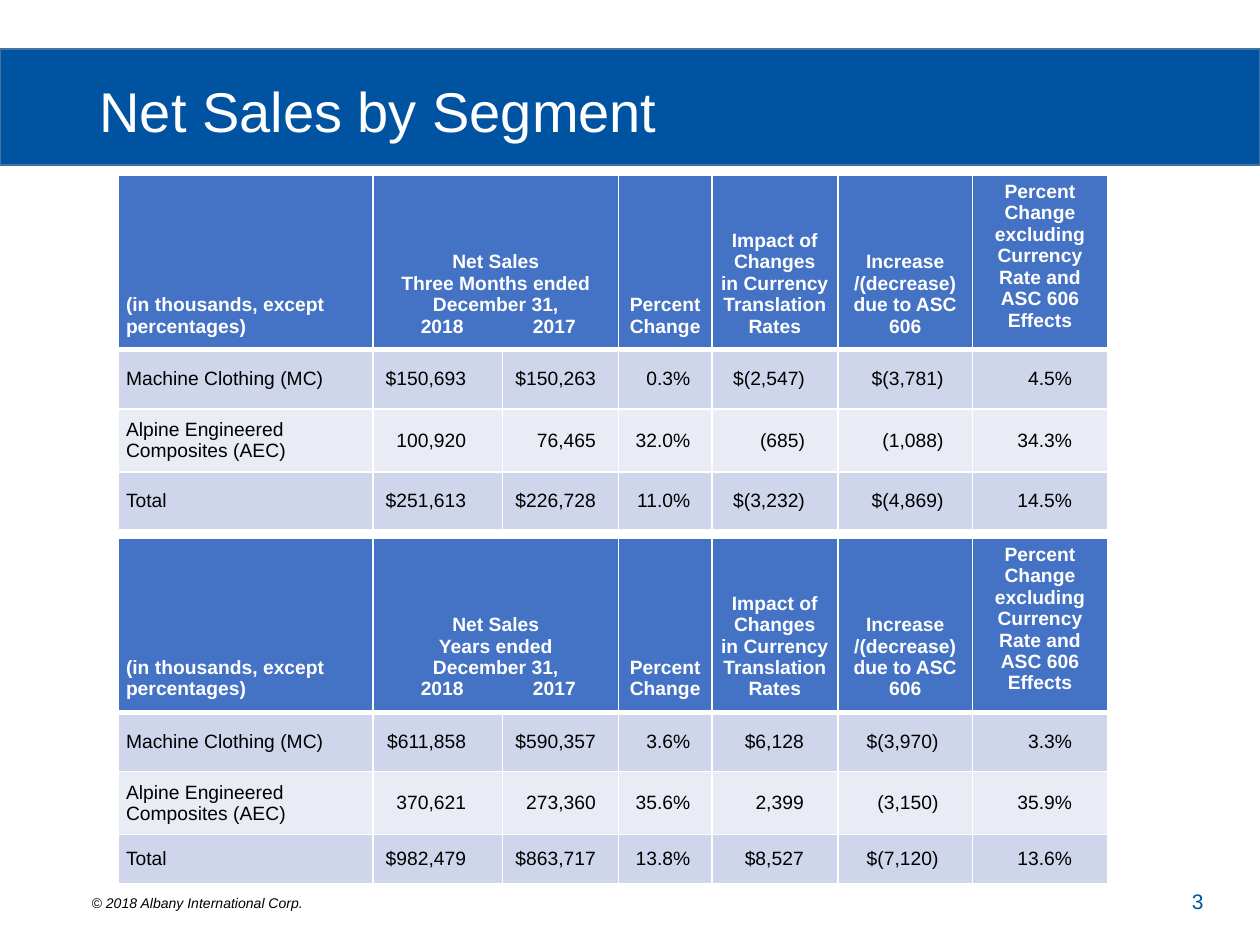
from dataclasses import dataclass

from lxml import etree
from pptx import Presentation
from pptx.dml.color import RGBColor
from pptx.enum.shapes import MSO_SHAPE
from pptx.enum.text import MSO_ANCHOR, MSO_AUTO_SIZE, PP_ALIGN
from pptx.oxml.ns import qn
from pptx.util import Inches, Pt

LEFT, CENTER, RIGHT = PP_ALIGN.LEFT, PP_ALIGN.CENTER, PP_ALIGN.RIGHT
MIDDLE, BOTTOM = MSO_ANCHOR.MIDDLE, MSO_ANCHOR.BOTTOM


@dataclass(frozen=True)
class Theme:
    font: str = "Arial"
    blue: str = "0053A1"
    band_line: str = "43739E"
    header: str = "4472C4"
    odd_row: str = "CFD5EA"
    even_row: str = "E9EBF5"
    white: str = "FFFFFF"
    black: str = "000000"
    title_size: int = 32
    table_size: int = 11
    number_size: int = 12
    footer_size: int = 8


THEME = Theme()


def write_lines(frame, lines, size, color, align=LEFT, **font_values):
    """Write one paragraph per line; a line with tabs gets the year tab stops."""
    frame.word_wrap = True
    values = {"name": THEME.font, "size": Pt(size), **font_values}
    for index, line in enumerate(lines):
        paragraph = frame.paragraphs[0] if index == 0 else frame.add_paragraph()
        paragraph.alignment = LEFT if "\t" in line else align
        if "\t" in line:
            tab_list = etree.SubElement(paragraph._p.get_or_add_pPr(), qn("a:tabLst"))
            for position in YEAR_TABS:
                etree.SubElement(tab_list, qn("a:tab"), pos=str(Inches(position)), algn="ctr")
        run = paragraph.add_run()
        run.text = line
        for name, value in values.items():
            setattr(run.font, name, value)
        run.font.color.rgb = RGBColor.from_string(color)


def set_borders(cell, top, bottom):
    properties = cell._tc.get_or_add_tcPr()
    widths = {"a:lnL": 1, "a:lnR": 1, "a:lnT": top, "a:lnB": bottom}
    for index, (tag, width) in enumerate(widths.items()):
        line = etree.Element(qn(tag), w=str(Pt(width)))
        fill = etree.SubElement(line, qn("a:solidFill"))
        etree.SubElement(fill, qn("a:srgbClr"), val=THEME.white)
        properties.insert(index, line)


COLUMN_WIDTHS = [2.02, 1.03, 0.92, 0.74, 1, 1.07, 1.07]
YEAR_TABS = [0.49, 1.38]
SEGMENTS = ["Machine Clothing (MC)", "Alpine Engineered Composites (AEC)", "Total"]

# Right margins line up the figures of each column
TABLES = [
    {
        "top": 1.39,
        "period": "Three Months ended",
        "row_heights": [1.2, 0.47, 0.5, 0.46],
        "right_margins": [0.06, 0.29, 0.18, 0.17, 0.26, 0.23, 0.28],
        "figures": [
            ["$150,693", "$150,263", "0.3%", "$(2,547)", "$(3,781)", "4.5%"],
            ["100,920", "76,465", "32.0%", "(685)", "(1,088)", "34.3%"],
            ["$251,613", "$226,728", "11.0%", "$(3,232)", "$(4,869)", "14.5%"],
        ],
    },
    {
        "top": 4.27,
        "period": "Years ended",
        "row_heights": [1.2, 0.47, 0.5, 0.39],
        "right_margins": [0.06, 0.29, 0.18, 0.17, 0.27, 0.27, 0.28],
        "figures": [
            ["$611,858", "$590,357", "3.6%", "$6,128", "$(3,970)", "3.3%"],
            ["370,621", "273,360", "35.6%", "2,399", "(3,150)", "35.9%"],
            ["$982,479", "$863,717", "13.8%", "$8,527", "$(7,120)", "13.6%"],
        ],
    },
]

presentation = Presentation()
presentation.slide_width = Inches(10)
presentation.slide_height = Inches(7.5)
slide = presentation.slides.add_slide(presentation.slide_layouts[5])

# Title band, placed behind the title
band = slide.shapes.add_shape(MSO_SHAPE.RECTANGLE, 0, Inches(0.39), Inches(10), Inches(0.92))
band.shadow.inherit = False
band.fill.solid()
band.fill.fore_color.rgb = RGBColor.from_string(THEME.blue)
band.line.color.rgb = RGBColor.from_string(THEME.band_line)
band.line.width = Pt(1)
slide.shapes._spTree.insert(2, band._element)

title = slide.shapes.title
title.left, title.top = Inches(0.69), Inches(0.18)
title.width, title.height = Inches(8.62), Inches(1.45)
title.text_frame.auto_size = MSO_AUTO_SIZE.NONE
title.text_frame.vertical_anchor = MIDDLE
write_lines(title.text_frame, ["Net Sales by Segment"], THEME.title_size, THEME.white)
title.text_frame.paragraphs[0].line_spacing = 0.9

# Footer and page number
footer = slide.shapes.add_textbox(Inches(0.63), Inches(7.05), Inches(9.07), Inches(0.24))
write_lines(footer.text_frame, ["© 2018 Albany International Corp."],
            THEME.footer_size, THEME.black, italic=True)
page_number = slide.shapes.add_textbox(Inches(7.06), Inches(6.95), Inches(2.59), Inches(0.4))
page_number.text_frame.vertical_anchor = MIDDLE
write_lines(page_number.text_frame, ["3"], THEME.number_size, THEME.blue, RIGHT)

# Net sales tables
for data in TABLES:
    headers = [
        ["(in thousands, except percentages)"],
        ["Net Sales", data["period"], "December 31,", "\t2018\t2017"],
        [],
        ["Percent", "Change"],
        ["Impact of Changes", "in Currency", "Translation Rates"],
        ["Increase /(decrease) due to ASC 606"],
        ["Percent Change", "excluding Currency Rate and ASC 606 Effects"],
    ]
    body = [[[segment]] + [[figure] for figure in figures]
            for segment, figures in zip(SEGMENTS, data["figures"])]
    rows = [headers] + body
    table = slide.shapes.add_table(
        len(rows), len(COLUMN_WIDTHS), Inches(0.94), Inches(data["top"]),
        Inches(sum(COLUMN_WIDTHS)), Inches(sum(data["row_heights"]))).table
    for column, width in zip(table.columns, COLUMN_WIDTHS):
        column.width = Inches(width)
    for row, height in zip(table.rows, data["row_heights"]):
        row.height = Inches(height)
    table.cell(0, 1).merge(table.cell(0, 2))

    for row_index, row_lines in enumerate(rows):
        is_header = row_index == 0
        row_fill = THEME.odd_row if row_index % 2 else THEME.even_row
        for column_index, lines in enumerate(row_lines):
            cell = table.cell(row_index, column_index)
            is_last = column_index == len(COLUMN_WIDTHS) - 1
            cell.vertical_anchor = BOTTOM if is_header and not is_last else MIDDLE
            cell.margin_left = Inches(0.06)
            cell.margin_right = Inches(0.06 if is_header else data["right_margins"][column_index])
            cell.margin_top = 0
            cell.margin_bottom = Inches(0.1 if is_header else 0)
            cell.fill.solid()
            cell.fill.fore_color.rgb = RGBColor.from_string(THEME.header if is_header else row_fill)
            set_borders(cell, 3 if row_index == 1 else 1, 3 if is_header else 1)
            align = LEFT if column_index == 0 else CENTER if is_header else RIGHT
            write_lines(cell.text_frame, lines, THEME.table_size,
                        THEME.white if is_header else THEME.black, align, bold=is_header)

presentation.save("out.pptx")
